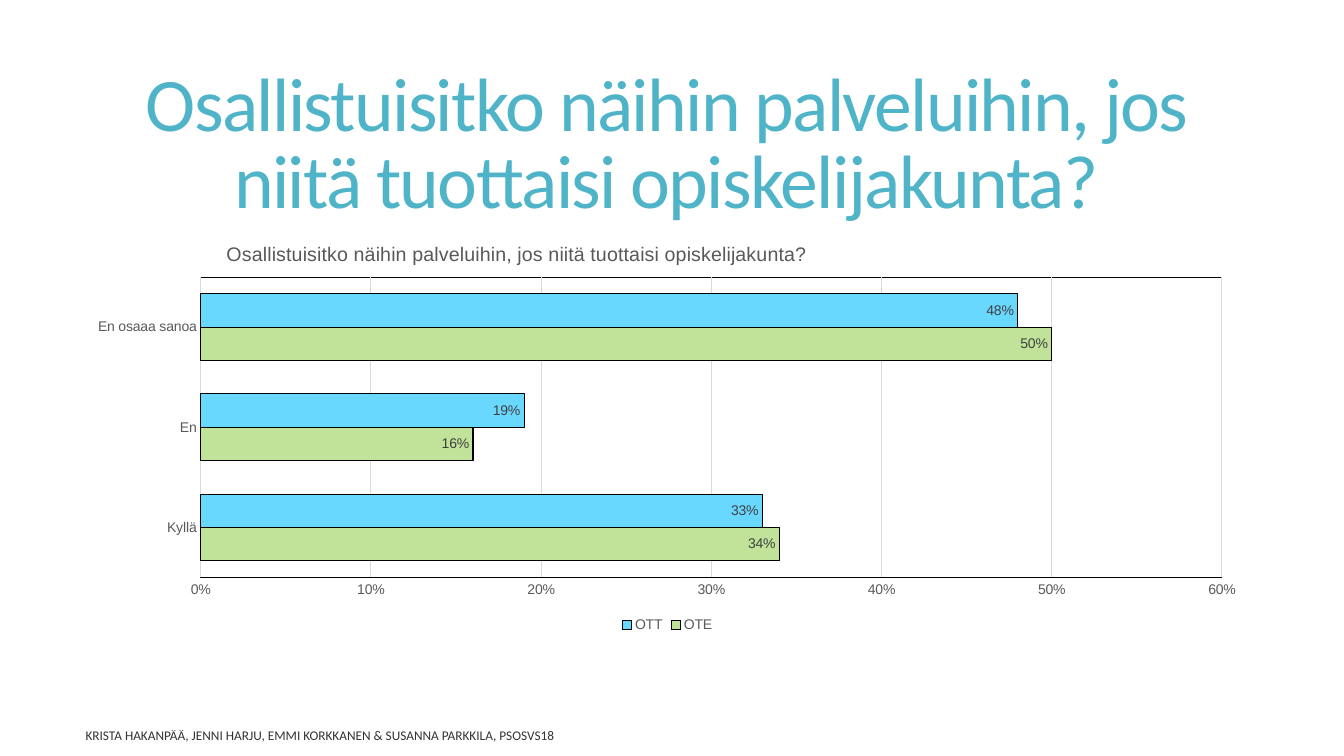
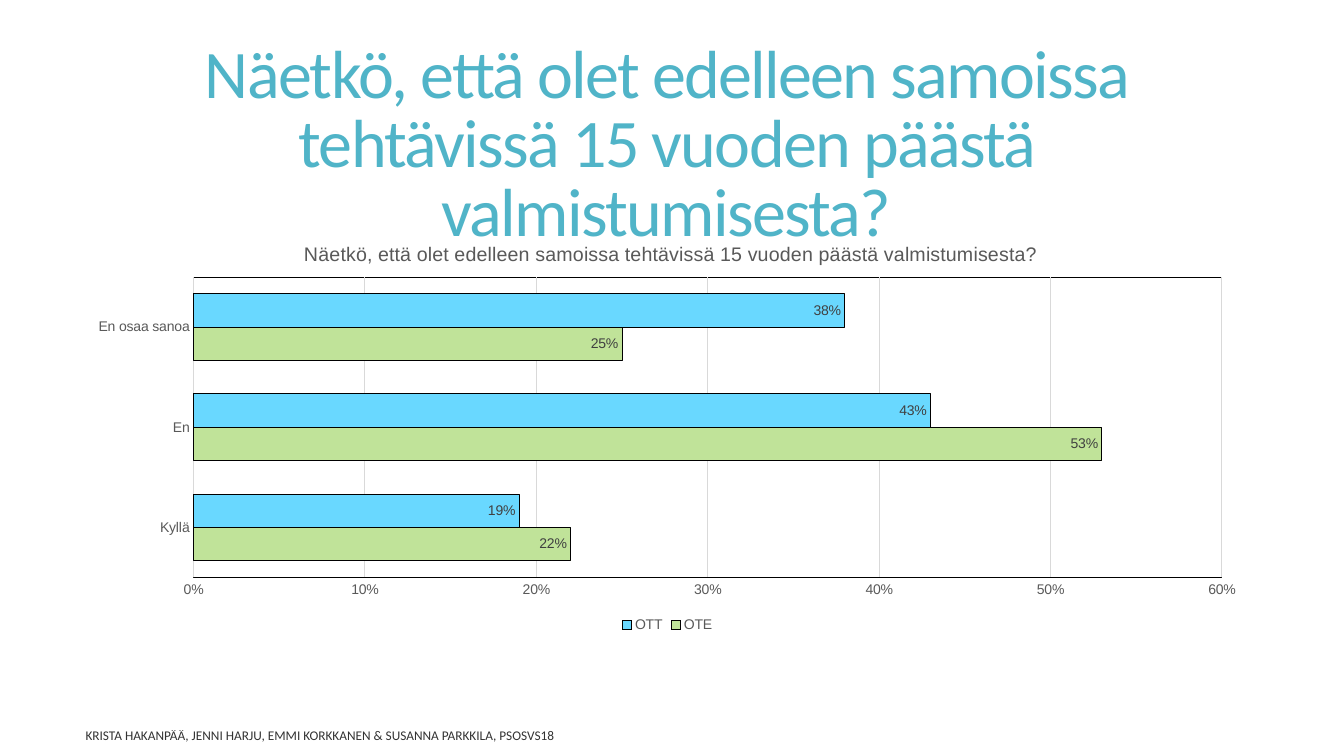
from lxml.etree import SubElement
from pptx import Presentation
from pptx.chart.data import CategoryChartData
from pptx.dml.color import RGBColor
from pptx.enum.chart import XL_CHART_TYPE, XL_LABEL_POSITION, XL_LEGEND_POSITION, XL_TICK_MARK
from pptx.enum.text import MSO_ANCHOR, MSO_AUTO_SIZE, PP_ALIGN
from pptx.oxml import parse_xml
from pptx.oxml.ns import nsdecls, qn
from pptx.util import Inches, Pt

COLORS = {
    "heading": "50B4C8",
    "ink": "000000",
    "axis": "595959",
    "value": "404040",
    "grid": "D9D9D9",
    "OTE": "C0E399",
    "OTT": "69D8FF",
}
AUTHORS = "KRISTA HAKANPÄÄ, JENNI HARJU, EMMI KORKKANEN & SUSANNA PARKKILA, PSOSVS18"
CHART_BOX = (0.74, 2.2, 11.76, 4.12)
PLOT_TOP, PLOT_RIGHT, PLOT_BOTTOM = 2.75, 12.12, 5.73
CAPTION_TOP = 2.36

QUESTIONS = [
    {
        "question": "Osallistuisitko näihin palveluihin, jos niitä tuottaisi opiskelijakunta?",
        "heading_size": 54,
        "answers": ["Kyllä", "En", "En osaaa sanoa"],
        "shares": {"OTE": [0.34, 0.16, 0.5], "OTT": [0.33, 0.19, 0.48]},
        "caption_left": 2.21,
        "plot_left": 1.99,
    },
    {
        "question": "Näetkö, että olet edelleen samoissa tehtävissä 15 vuoden päästä valmistumisesta?",
        "heading_size": 48.6,
        "answers": ["Kyllä", "En", "En osaa sanoa"],
        "shares": {"OTE": [0.22, 0.53, 0.25], "OTT": [0.19, 0.43, 0.38]},
        "caption_left": 2.98,
        "plot_left": 1.92,
    },
]


def rgb(name):
    return RGBColor.from_string(COLORS[name])


def outline(line, color):
    line.color.rgb = rgb(color)
    line.width = Pt(0.75)


def manual_layout(left, top, right=None, bottom=None):
    box_left, box_top, box_width, box_height = CHART_BOX
    parts = {"xMode": "edge", "yMode": "edge"}
    if right is not None:
        parts = {"layoutTarget": "inner", **parts}
    parts["x"] = (left - box_left) / box_width
    parts["y"] = (top - box_top) / box_height
    if right is not None:
        parts["w"] = (right - left) / box_width
        parts["h"] = (bottom - top) / box_height
    layout = parse_xml(f"<c:layout {nsdecls('c')}><c:manualLayout/></c:layout>")
    for tag, value in parts.items():
        SubElement(layout[0], qn(f"c:{tag}")).set("val", str(value))
    return layout


def drop_layout(parent):
    for layout in parent.findall(qn("c:layout")):
        parent.remove(layout)


class SurveyDeck:
    def __init__(self):
        self.deck = Presentation()
        self.deck.slide_width = Inches(13.33)
        self.deck.slide_height = Inches(7.5)
        self.slide = None

    def new_slide(self):
        self.slide = self.deck.slides.add_slide(self.deck.slide_layouts[5])

    def style(self, font, size, color, face="Arial"):
        font.name = face
        font.size = Pt(size)
        font.bold = False
        font.color.rgb = rgb(color)

    def heading(self, question, size):
        heading = self.slide.shapes.title
        heading.left, heading.top = Inches(0.72), Inches(0.55)
        heading.width, heading.height = Inches(11.78), Inches(1.81)
        frame = heading.text_frame
        frame.word_wrap = True
        frame.auto_size = MSO_AUTO_SIZE.NONE
        frame.vertical_anchor = MSO_ANCHOR.MIDDLE
        paragraph = frame.paragraphs[0]
        paragraph.alignment = PP_ALIGN.CENTER
        paragraph.line_spacing = 0.85
        run = paragraph.add_run()
        run.text = question
        self.style(run.font, size, "heading", "Calibri")
        run.font._element.set("spc", "-120")

    def footer(self):
        footer = self.slide.shapes.add_textbox(
            Inches(0.75), Inches(7.17), Inches(5.5), Inches(0.25))
        frame = footer.text_frame
        frame.word_wrap = True
        frame.vertical_anchor = MSO_ANCHOR.MIDDLE
        run = frame.paragraphs[0].add_run()
        run.text = AUTHORS
        self.style(run.font, 9.5, "ink", "Calibri")
        ink = run.font._element.find(f".//{qn('a:srgbClr')}")
        SubElement(ink, qn("a:alpha")).set("val", "80000")

    def bars(self, question, answers, shares, caption_left, plot_left):
        survey = CategoryChartData(number_format="0%")
        survey.categories = answers
        for group, values in shares.items():
            survey.add_series(group, values)
        chart = self.slide.shapes.add_chart(
            XL_CHART_TYPE.BAR_CLUSTERED, *map(Inches, CHART_BOX), survey).chart
        self.style(chart.font, 10, "ink", "Calibri")
        self.caption(chart, question, caption_left)
        self.axes(chart)
        self.series(chart.plots[0])
        chart.has_legend = True
        chart.legend.position = XL_LEGEND_POSITION.BOTTOM
        chart.legend.include_in_layout = False
        self.style(chart.legend.font, 10, "axis")
        self.plot_frame(chart, plot_left)

    def caption(self, chart, question, left):
        chart.has_title = True
        caption = chart.chart_title
        run = caption.text_frame.paragraphs[0].add_run()
        run.text = question
        self.style(run.font, 14, "axis")
        title = caption._element
        drop_layout(title)
        title.find(qn("c:tx")).addnext(manual_layout(left, CAPTION_TOP))

    def axes(self, chart):
        for axis in (chart.category_axis, chart.value_axis):
            axis.major_tick_mark = XL_TICK_MARK.NONE
            axis.minor_tick_mark = XL_TICK_MARK.NONE
            self.style(axis.tick_labels.font, 10, "axis")
        outline(chart.category_axis.format.line, "grid")
        scale = chart.value_axis
        scale.minimum_scale, scale.maximum_scale, scale.major_unit = 0, 0.6, 0.1
        scale.tick_labels.number_format = "0%"
        scale.tick_labels.number_format_is_linked = False
        scale.format.line.fill.background()
        outline(scale.major_gridlines.format.line, "grid")

    def series(self, plot):
        plot.gap_width = 100
        plot.overlap = 0
        plot.vary_by_categories = False
        for group in plot.series:
            group.format.fill.solid()
            group.format.fill.fore_color.rgb = rgb(group.name)
            outline(group.format.line, "ink")
            labels = group.data_labels
            labels.show_value = True
            labels.position = XL_LABEL_POSITION.INSIDE_END
            labels.number_format = "0%"
            labels.number_format_is_linked = False
            self.style(labels.font, 10, "value")

    def plot_frame(self, chart, left):
        area = chart.element.find(f".//{qn('c:plotArea')}")
        drop_layout(area)
        area.insert(0, manual_layout(left, PLOT_TOP, PLOT_RIGHT, PLOT_BOTTOM))
        area.append(parse_xml(
            f"<c:spPr {nsdecls('c', 'a')}><a:noFill/><a:ln w='{Pt(0.75)}'><a:solidFill>"
            f"<a:srgbClr val='{COLORS['ink']}'/></a:solidFill></a:ln></c:spPr>"))


def main():
    survey = SurveyDeck()
    for item in QUESTIONS:
        survey.new_slide()
        survey.heading(item["question"], item["heading_size"])
        survey.footer()
        survey.bars(item["question"], item["answers"], item["shares"],
                    item["caption_left"], item["plot_left"])
    survey.deck.save("out.pptx")


if __name__ == "__main__":
    main()
